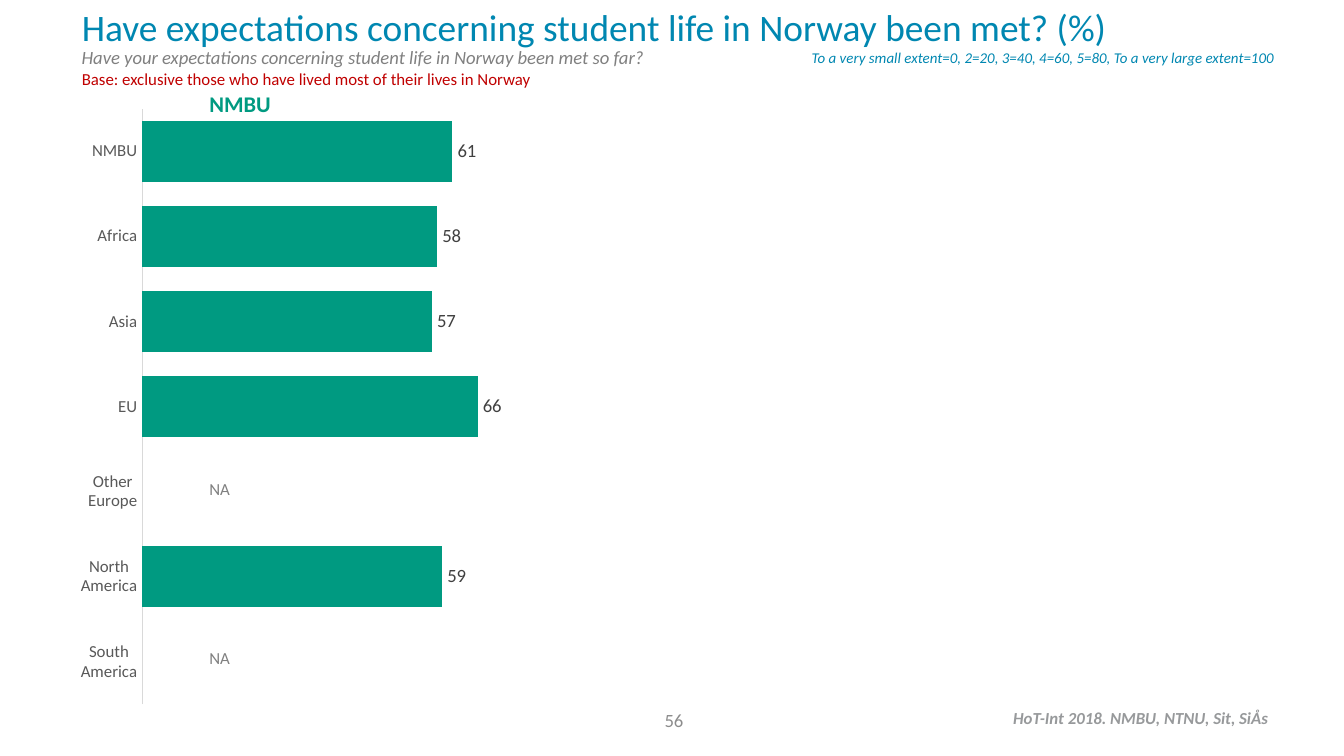
"""Build the slide on how far expectations of student life were met."""
from dataclasses import dataclass

from lxml import etree
from pptx import Presentation
from pptx.chart.data import CategoryChartData
from pptx.dml.color import RGBColor
from pptx.enum import chart as ch, text as tx
from pptx.oxml import ns
from pptx.util import Inches, Pt

FONT = "Calibri"
HUES = {"green": "009A81", "blue": "0087B1", "red": "C00000", "gray": "808080",
        "foot": "97999B", "page": "8C8C8C", "axis": "595959", "label": "404040",
        "line": "D9D9D9"}
SCORES = {"NMBU": 61, "Africa": 58, "Asia": 57, "EU": 66, "Other Europe": None,
          "North America": 59, "South America": None}
WIDE, HIGH = 4.41, 4.61
PLOT = {"x": 0.55 / WIDE, "y": 0.09 / HIGH, "w": 3.78 / WIDE, "h": 4.43 / HIGH}


@dataclass
class Note:
    """A line of text with its place and style."""
    words: str
    left: float
    top: float
    width: float
    height: float
    size: float
    hue: str
    bold: bool = False
    slant: bool = False
    wrap: bool = True
    mid: bool = False


NOTES = [
    Note("HoT-Int 2018. NMBU, NTNU, Sit, SiÅs", 7.44, 5.22, 2.13, 0.25, 9, "foot",
         bold=True, slant=True, wrap=False),
    Note("56", 3.85, 5.21, 2.33, 0.3, 10, "page", mid=True),
    Note("NMBU", 1.46, 0.62, 0.66, 0.3, 12, "green", bold=True, wrap=False),
    *[Note("NA", 1.46, top, 0.36, 0.25, 9, "gray", wrap=False) for top in (3.51, 4.77)],
    Note("To a very small extent=0, 2=20, 3=40, 4=60, 5=80, To a very large extent=100",
         5.94, 0.31, 3.79, 0.24, 8, "blue", slant=True),
    Note("Have expectations concerning student life in Norway been met? (%)",
         0.51, -0.02, 9.29, 0.55, 20, "blue"),
    Note("Have your expectations concerning student life in Norway been met so far?",
         0.51, 0.29, 4.7, 0.27, 10, "gray", slant=True),
    Note("Base: exclusive those who have lived most of their lives in Norway",
         0.51, 0.46, 3.59, 0.25, 9, "red", wrap=False),
]


def style(font, size: float, hue: str) -> None:
    """Set the face, size and colour of a font."""
    font.name, font.size = FONT, Pt(size)
    font.color.rgb = RGBColor.from_string(HUES[hue])


def write(slide, note: Note) -> None:
    """Add one note as a text box."""
    box = slide.shapes.add_textbox(Inches(note.left), Inches(note.top),
                                   Inches(note.width), Inches(note.height))
    frame = box.text_frame
    frame.word_wrap = note.wrap
    para = frame.paragraphs[0]
    if note.mid:
        frame.vertical_anchor = tx.MSO_ANCHOR.MIDDLE
        para.alignment = tx.PP_ALIGN.CENTER
    run = para.add_run()
    run.text = note.words
    style(run.font, note.size, note.hue)
    run.font.bold, run.font.italic = note.bold, note.slant


def place(chart) -> None:
    """Fix the inner plot area within the chart."""
    area = chart.element.find(".//" + ns.qn("c:plotArea"))
    for old in area.findall(ns.qn("c:layout")):
        area.remove(old)
    layout = etree.Element(ns.qn("c:layout"))
    area.insert(0, layout)
    manual = etree.SubElement(layout, ns.qn("c:manualLayout"))
    parts = {"layoutTarget": "inner", "xMode": "edge", "yMode": "edge", **PLOT}
    for tag, val in parts.items():
        etree.SubElement(manual, ns.qn("c:" + tag)).set("val", str(val))


def draw(slide) -> None:
    """Add the bar chart of scores by region."""
    data = CategoryChartData()
    data.categories = list(SCORES)
    data.add_series("Series 1", list(SCORES.values()))
    chart = slide.shapes.add_chart(ch.XL_CHART_TYPE.BAR_CLUSTERED, Inches(0.51),
                                   Inches(0.72), Inches(WIDE), Inches(HIGH), data).chart
    chart.has_legend = chart.has_title = False
    chart.font.name, chart.font.size = FONT, Pt(10)
    place(chart)

    cats, vals = chart.category_axis, chart.value_axis
    cats.reverse_order = True
    cats.major_tick_mark = ch.XL_TICK_MARK.NONE
    cats.format.line.color.rgb = RGBColor.from_string(HUES["line"])
    cats.format.line.width = Pt(0.75)
    style(cats.tick_labels.font, 9, "axis")
    vals.minimum_scale, vals.maximum_scale = 0, 100
    vals.has_major_gridlines = vals.visible = False

    plot = chart.plots[0]
    plot.gap_width, plot.vary_by_categories = 40, False
    bars = plot.series[0]
    bars.format.fill.solid()
    bars.format.fill.fore_color.rgb = RGBColor.from_string(HUES["green"])
    labels = bars.data_labels
    labels.show_value = True
    labels.position = ch.XL_LABEL_POSITION.OUTSIDE_END
    style(labels.font, 10, "label")


def main() -> None:
    """Build and save a slide in the 16:9 ratio."""
    deck = Presentation()
    deck.slide_width = Inches(10)
    deck.slide_height = deck.slide_width * 9 // 16
    slide = deck.slides.add_slide(deck.slide_layouts[6])
    draw(slide)
    for note in NOTES:
        write(slide, note)
    deck.save("out.pptx")


if __name__ == "__main__":
    main()
